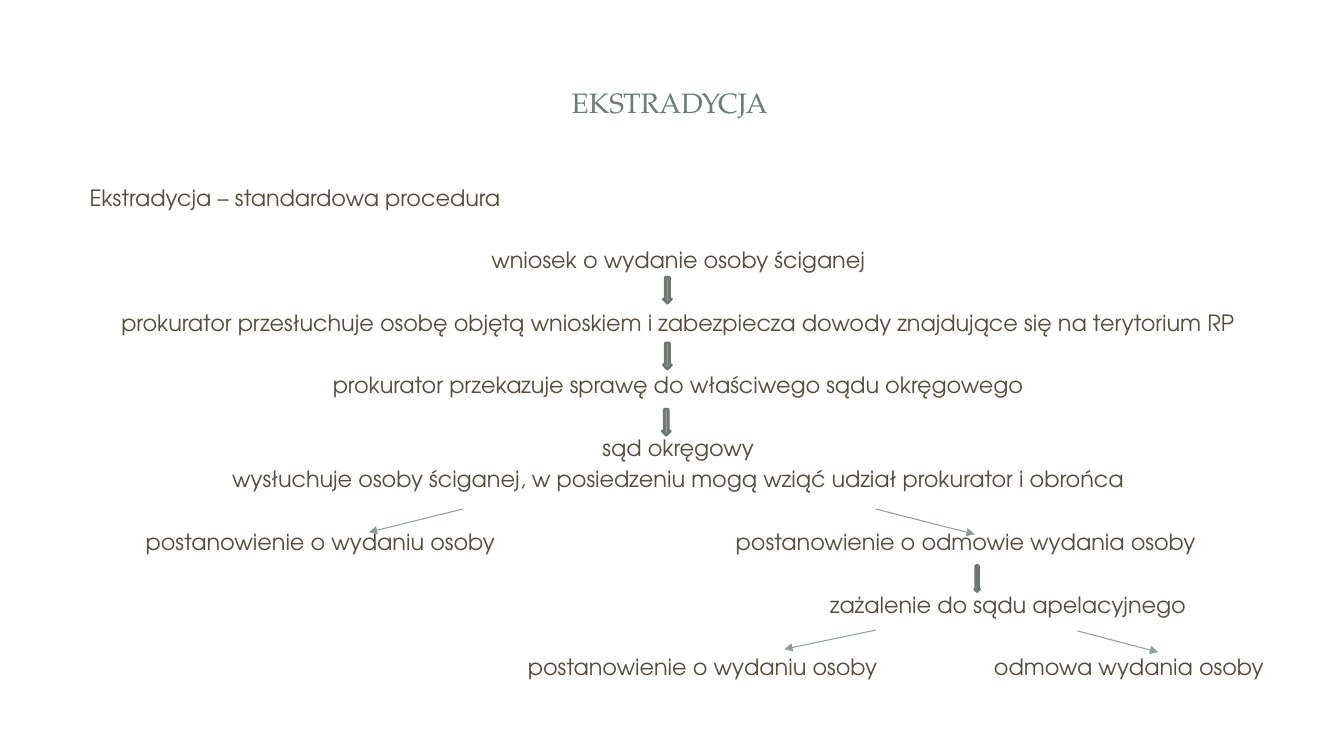
from lxml.etree import SubElement
from pptx import Presentation
from pptx.dml.color import RGBColor
from pptx.enum.shapes import MSO_CONNECTOR, MSO_SHAPE
from pptx.enum.text import MSO_ANCHOR, PP_ALIGN
from pptx.oxml.ns import qn
from pptx.util import Pt

FIRST_ROW = 140.8   # middle of the first text row
ROW_STEP = 22.36
ROW_HEIGHT = 22


def color(hex_string):
    return RGBColor.from_string(hex_string)


def add_text(text, left, middle, width, height, align,
             font="TeX Gyre Adventor", size=16, fill="564B3C"):
    box = slide.shapes.add_textbox(Pt(left), Pt(middle - height / 2), Pt(width), Pt(height))
    frame = box.text_frame
    frame.word_wrap = True
    frame.vertical_anchor = MSO_ANCHOR.MIDDLE
    frame.margin_left = frame.margin_right = frame.margin_top = frame.margin_bottom = 0
    paragraph = frame.paragraphs[0]
    paragraph.text = text
    paragraph.alignment = align
    paragraph.font.name = font
    paragraph.font.size = Pt(size)
    paragraph.font.color.rgb = color(fill)


presentation = Presentation()
presentation.slide_width = Pt(960)
presentation.slide_height = Pt(540)
slide = presentation.slides.add_slide(presentation.slide_layouts[6])

# Title
add_text("EKSTRADYCJA", 44.6, 73.4, 867.6, 82, PP_ALIGN.CENTER, "TeX Gyre Pagella", 20, "6B7D72")

# Centred steps of the procedure: row, text
steps = [
    (2, "wniosek o wydanie osoby ściganej"),
    (4, "prokurator przesłuchuje osobę objętą wnioskiem i zabezpiecza dowody "
        "znajdujące się na terytorium RP"),
    (6, "prokurator przekazuje sprawę do właściwego sądu okręgowego"),
    (8, "sąd okręgowy"),
    (9, "wysłuchuje osoby ściganej, w posiedzeniu mogą wziąć udział prokurator i obrońca"),
]
for row, text in steps:
    add_text(text, 64, FIRST_ROW + row * ROW_STEP, 841, ROW_HEIGHT, PP_ALIGN.CENTER)

# Heading and decisions: row, left, width, text
decisions = [
    (0, 64, 310, "Ekstradycja – standardowa procedura"),
    (11, 104, 270, "postanowienie o wydaniu osoby"),
    (11, 525.5, 350, "postanowienie o odmowie wydania osoby"),
    (13, 593, 270, "zażalenie do sądu apelacyjnego"),
    (15, 377, 270, "postanowienie o wydaniu osoby"),
    (15, 710, 210, "odmowa wydania osoby"),
]
for row, left, width, text in decisions:
    add_text(text, left, FIRST_ROW + row * ROW_STEP, width, ROW_HEIGHT, PP_ALIGN.LEFT)

# Block arrows between steps: left, top, width
block_arrows = [(473.8, 198, 5.8), (473.8, 245, 5.8), (473, 292.3, 5.8), (696.2, 404, 3.6)]
for left, top, width in block_arrows:
    arrow = slide.shapes.add_shape(MSO_SHAPE.DOWN_ARROW, Pt(left), Pt(top), Pt(width), Pt(18.5))
    arrow.shadow.inherit = False
    arrow.fill.solid()
    arrow.fill.fore_color.rgb = color("93A299")
    arrow.line.color.rgb = color("6D7871")
    arrow.line.width = Pt(2)

# Thin arrows to the possible outcomes: start x, y, end x, y
branches = [
    (330.5, 363.6, 263.5, 380.2),
    (625.7, 363.6, 696.2, 381.6),
    (625.7, 450, 560.2, 463.7),
    (769.7, 450.7, 827.3, 465.8),
]
for branch in branches:
    connector = slide.shapes.add_connector(MSO_CONNECTOR.STRAIGHT, *map(Pt, branch))
    connector.line.color.rgb = color("8F9F96")
    connector.line.width = Pt(0.75)
    SubElement(connector.line._get_or_add_ln(), qn("a:tailEnd"), type="triangle")
    SubElement(connector._element.spPr, qn("a:effectLst"))

presentation.save("out.pptx")
